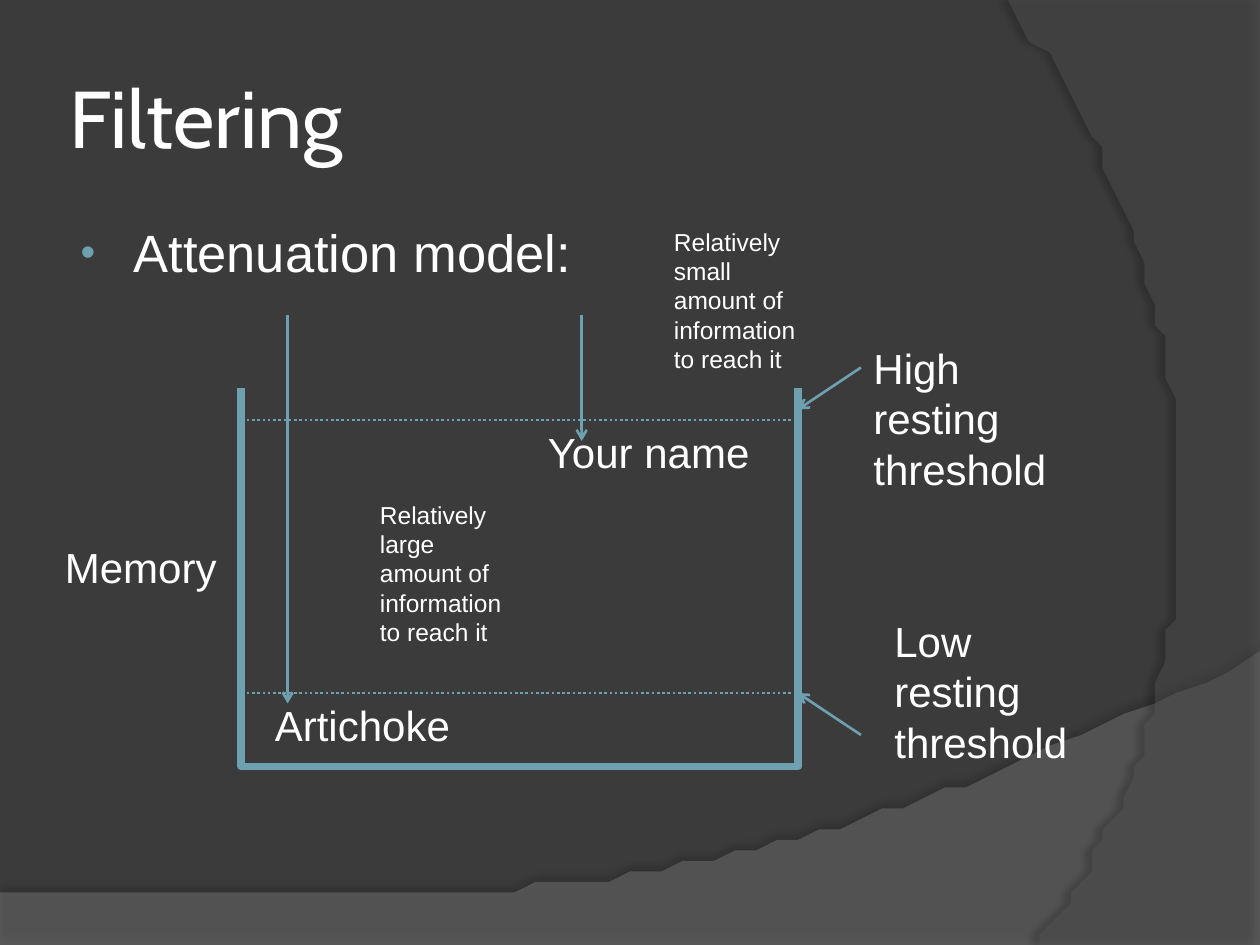
from lxml import etree
from pptx import Presentation
from pptx import util as u
from pptx.dml.color import RGBColor
from pptx.enum import dml, shapes, text
from pptx.oxml import parse_xml
from pptx.oxml.ns import nsdecls, qn

BACKGROUND = RGBColor(0x3B, 0x3B, 0x3B)
LOWER_WAVE = RGBColor(0x7C, 0x7C, 0x7C)
RIGHT_WAVE = RGBColor(0x59, 0x59, 0x59)
ACCENT = RGBColor(0x6E, 0xA0, 0xB0)
WHITE = RGBColor(0xFF, 0xFF, 0xFF)

# The slide is a grid of 120 columns by 90 rows, twelve to the inch
CELL = u.Inches(1) // 12

prs = Presentation()
prs.slide_width, prs.slide_height = 120 * CELL, 90 * CELL
slide = prs.slides.add_slide(prs.slide_layouts[1])
slide.background.fill.solid()
slide.background.fill.fore_color.rgb = BACKGROUND


def write(words, at, size=24, font="Arial", holder=None, wrap=True, anchor=text.MSO_ANCHOR.TOP):
    """Put words in a placeholder, or in a new text box, at (column, row, columns, rows)."""
    left, top, width, height = (round(cells * CELL) for cells in at)
    if holder is None:
        holder = slide.shapes.add_textbox(left, top, width, height)
    else:
        holder.left, holder.top, holder.width, holder.height = left, top, width, height
    frame = holder.text_frame
    frame.text = words
    frame.word_wrap = wrap
    frame.auto_size = text.MSO_AUTO_SIZE.NONE
    frame.vertical_anchor = anchor
    paragraph = frame.paragraphs[0]
    paragraph.alignment = text.PP_ALIGN.LEFT
    style = paragraph.runs[0].font
    style.size, style.name, style.color.rgb = u.Pt(size), font, WHITE
    return frame


def outline(points, close):
    """Build a freeform through points given in columns and rows."""
    builder = slide.shapes.build_freeform(*points[0], scale=CELL)
    builder.add_line_segments(points[1:], close=close)
    shape = builder.convert_to_shape()
    shape.shadow.inherit = False
    return shape


# Background waves: corners, then a Bezier curve back to the first corner
waves = [
    ([(0, 84.6), (0, 90), (120, 90)],
     [(120, 62.4), (67.08, 87.48), (46.92, 86.28), (0, 84.6)], LOWER_WAVE, 45, 35, 3.5, 270),
    ([(96, 0), (120, 0.24), (120, 90)],
     [(98.52, 90), (112.2, 74.28), (122.16, 36), (96, 0)], RIGHT_WAVE, 40, 45, 4, 180),
]
for depth, (corners, curve, color, opacity, shade, distance, angle) in enumerate(waves):
    bend = []
    for step in range(61):
        t = step / 60
        weights = ((1 - t) ** 3, 3 * t * (1 - t) ** 2, 3 * t ** 2 * (1 - t), t ** 3)
        bend.append(tuple(sum(w * point[axis] for w, point in zip(weights, curve))
                          for axis in (0, 1)))
    wave = outline(corners + bend, close=True)
    wave.line.fill.background()
    wave.fill.solid()
    wave.fill.fore_color.rgb = color
    properties = wave.element.spPr
    tint = properties.find(qn("a:solidFill")).find(qn("a:srgbClr"))
    etree.SubElement(tint, qn("a:alpha"), val=str(opacity * 1000))
    properties.find(qn("a:effectLst")).append(parse_xml(
        f'<a:outerShdw {nsdecls("a")} blurRad="{u.Pt(4)}" dist="{u.Pt(distance)}" '
        f'dir="{angle * 60000}" algn="ctr" rotWithShape="0"><a:srgbClr val="000000">'
        f'<a:alpha val="{shade * 1000}"/></a:srgbClr></a:outerShdw>'))
    slide.shapes._spTree.insert(2 + depth, wave.element)

# Title and topic
title = write("Filtering", (6, 3.6, 98, 15), size=46, font="Cabin",
              holder=slide.shapes.title, anchor=text.MSO_ANCHOR.MIDDLE)
title.margin_left = title.margin_right = u.Inches(0.05)

topic = write("Attenuation model:", (6, 21, 98, 59.4), size=30,
              holder=slide.placeholders[1]).paragraphs[0]
topic.line_spacing = 0.9
bullet = topic._p.get_or_add_pPr()
bullet.set("marL", str(u.Inches(0.46)))
bullet.set("indent", str(u.Inches(-0.42)))
for mark in (f'<a:buClr {nsdecls("a")}><a:srgbClr val="{ACCENT}"/></a:buClr>',
             f'<a:buSzPct {nsdecls("a")} val="80000"/>',
             f'<a:buFont {nsdecls("a")} typeface="Arial"/>',
             f'<a:buChar {nsdecls("a")} char="•"/>'):
    bullet.append(parse_xml(mark))

# Memory basin
basin = outline([(23.4, 37.4), (23, 73.3), (75.8, 73.2), (75.6, 37)], close=False)
basin.fill.background()
basin.line.color.rgb, basin.line.width = ACCENT, u.Pt(4.5)

# Thresholds are dotted; pointers and incoming information carry arrowheads
HIGH, LOW = 40, 66
for start, end, is_arrow in [
    ((23, HIGH), (76, HIGH), False),
    ((23, LOW), (76, LOW), False),
    ((82, 35), (76, 39), True),
    ((82, 70), (76, LOW), True),
    ((55.4, 30), (55.4, 42), True),
    ((27.4, 30), (27.4, 67), True),
]:
    ends = (round(cells * CELL) for cells in start + end)
    link = slide.shapes.add_connector(shapes.MSO_CONNECTOR.STRAIGHT, *ends)
    link.line.color.rgb, link.line.width = ACCENT, u.Pt(1.5)
    if is_arrow:
        etree.SubElement(link.line._get_or_add_ln(), qn("a:tailEnd"), type="arrow")
    else:
        link.line.dash_style = dml.MSO_LINE.ROUND_DOT
    etree.SubElement(link._element.spPr, qn("a:effectLst"))

# Labels
for level, column, row in [("High", 82, 32), ("Low", 84, 58)]:
    write(f"{level} resting threshold", (column, row, 21, 15.7))
for word, column, row, columns in [("Artichoke", 25, LOW, 19.4), ("Your name", 51, HIGH, 21.8),
                                   ("Memory", 5, 51, 17)]:
    write(word, (column, row, columns, 6.1), wrap=False)
for amount, column, row in [("small", 63, 21), ("large", 35, 47)]:
    write(f"Relatively {amount} amount of information to reach it",
          (column, row, 14, 15.4), size=14)

prs.save("out.pptx")
